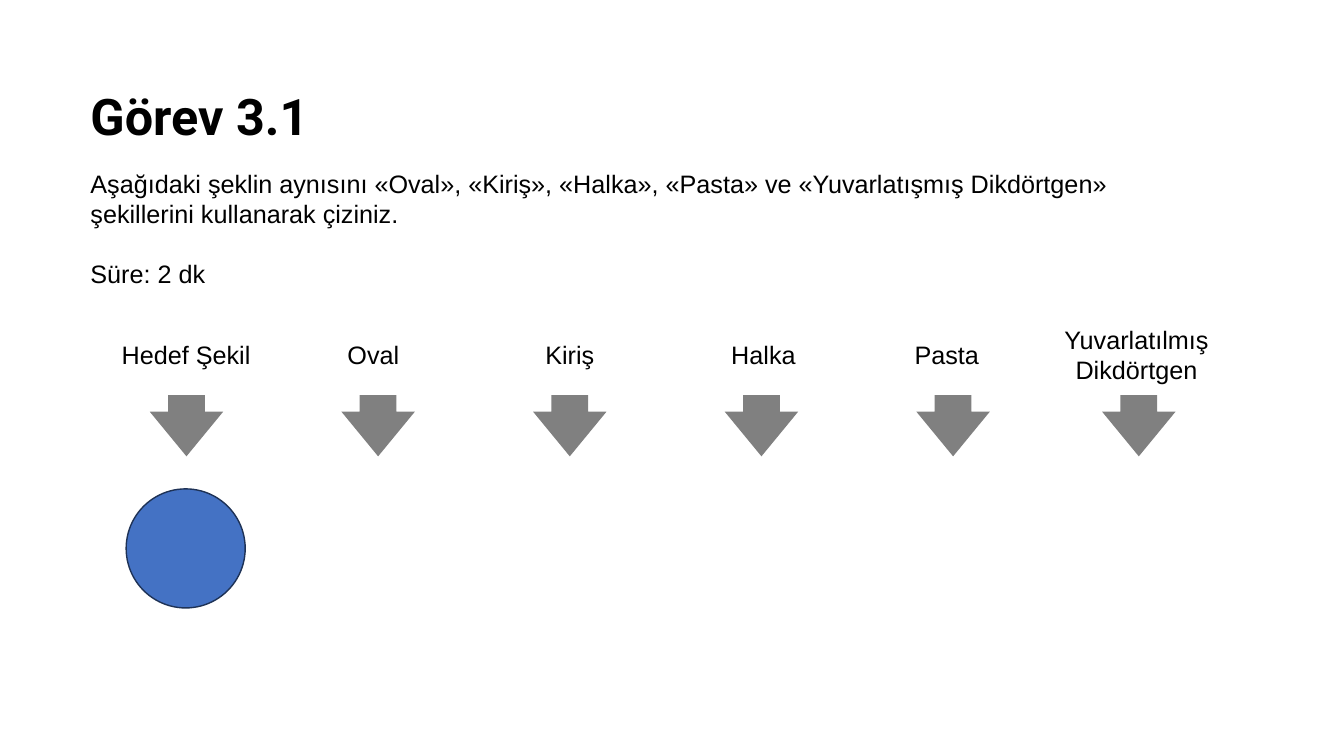
from dataclasses import dataclass

from pptx import Presentation
from pptx.dml.color import RGBColor
from pptx.enum.shapes import MSO_SHAPE
from pptx.enum.text import MSO_ANCHOR, PP_ALIGN
from pptx.util import Cm, Pt


@dataclass(frozen=True)
class Theme:
    text: str = "000000"
    arrow: str = "808080"
    circle: str = "4472C4"
    outline: str = "1E3256"
    title_font: str = "Roboto"
    body_font: str = "Arial"
    title_size: float = 36
    body_size: float = 18


def write(p, text, font, size, color, bold=False, align=PP_ALIGN.LEFT, before=0):
    p.alignment = align
    p.space_before = Pt(before)
    r = p.add_run()
    r.text = text
    r.font.name = font
    r.font.size = Pt(size)
    r.font.bold = bold
    r.font.color.rgb = RGBColor.from_string(color)


class Deck:
    def __init__(self, theme):
        self.theme = theme
        self.prs = Presentation()
        self.prs.slide_width = Cm(33.87)
        self.prs.slide_height = Cm(19.05)
        self.s = self.prs.slides.add_slide(self.prs.slide_layouts[6])

    def box(self, x, y, w, h):
        tf = self.s.shapes.add_textbox(Cm(x), Cm(y), Cm(w), Cm(h)).text_frame
        tf.word_wrap = True
        return tf

    def title(self, text, x, y, w, h):
        t = self.theme
        tf = self.box(x, y, w, h)
        write(tf.paragraphs[0], text, t.title_font, t.title_size, t.text, bold=True)

    def body(self, texts, x, y, w, h, gap):
        t = self.theme
        tf = self.box(x, y, w, h)
        for i, text in enumerate(texts):
            p = tf.add_paragraph() if i else tf.paragraphs[0]
            write(p, text, t.body_font, t.body_size, t.text, before=gap if i else 0)

    def label(self, text, center, middle, w, h):
        t = self.theme
        tf = self.box(center - w / 2, middle - h / 2, w, h)
        tf.vertical_anchor = MSO_ANCHOR.MIDDLE
        write(tf.paragraphs[0], text, t.body_font, t.body_size, t.text,
              align=PP_ALIGN.CENTER)

    def shape(self, kind, center, y, w, h, fill, line=None):
        sp = self.s.shapes.add_shape(kind, Cm(center - w / 2), Cm(y), Cm(w), Cm(h))
        sp.shadow.inherit = False
        sp.fill.solid()
        sp.fill.fore_color.rgb = RGBColor.from_string(fill)
        if line:
            sp.line.color.rgb = RGBColor.from_string(line)
            sp.line.width = Pt(1)
        else:
            sp.line.fill.background()
        return sp

    def arrow(self, center, y, w, h):
        sp = self.shape(MSO_SHAPE.DOWN_ARROW, center, y, w, h, self.theme.arrow)
        sp.adjustments[0] = 0.5
        sp.adjustments[1] = 0.73

    def circle(self, center, y, d):
        self.shape(MSO_SHAPE.OVAL, center, y, d, d, self.theme.circle,
                   self.theme.outline)


def main():
    deck = Deck(Theme())
    left = 2.03
    deck.title("Görev 3.1", left, 2.03, 8.76, 1.8)
    deck.body(
        ["Aşağıdaki şeklin aynısını «Oval», «Kiriş», «Halka», «Pasta» ve "
         "«Yuvarlatışmış Dikdörtgen» şekillerini kullanarak çiziniz.",
         "Süre: 2 dk"],
        left, 4.11, 28.37, 3.33, gap=21)

    first_arrow, arrow_pitch, last_arrow = 4.7, 4.83, 28.7
    labels = [
        ("Hedef Şekil", 4.69, 5.31, 1.02),
        ("Oval", 9.41, 3.07, 1.02),
        ("Kiriş", 14.36, 3.07, 1.02),
        ("Halka", 19.24, 3.07, 1.02),
        ("Pasta", 23.86, 3.07, 1.02),
        ("Yuvarlatılmış Dikdörtgen", 28.64, 6.43, 1.8),
    ]
    for i, (text, center, w, h) in enumerate(labels):
        deck.label(text, center, 8.93, w, h)
        deck.arrow(min(first_arrow + i * arrow_pitch, last_arrow), 9.96, 1.85, 1.54)

    deck.circle(first_arrow - 0.02, 12.32, 3)
    deck.prs.save("out.pptx")


if __name__ == "__main__":
    main()
